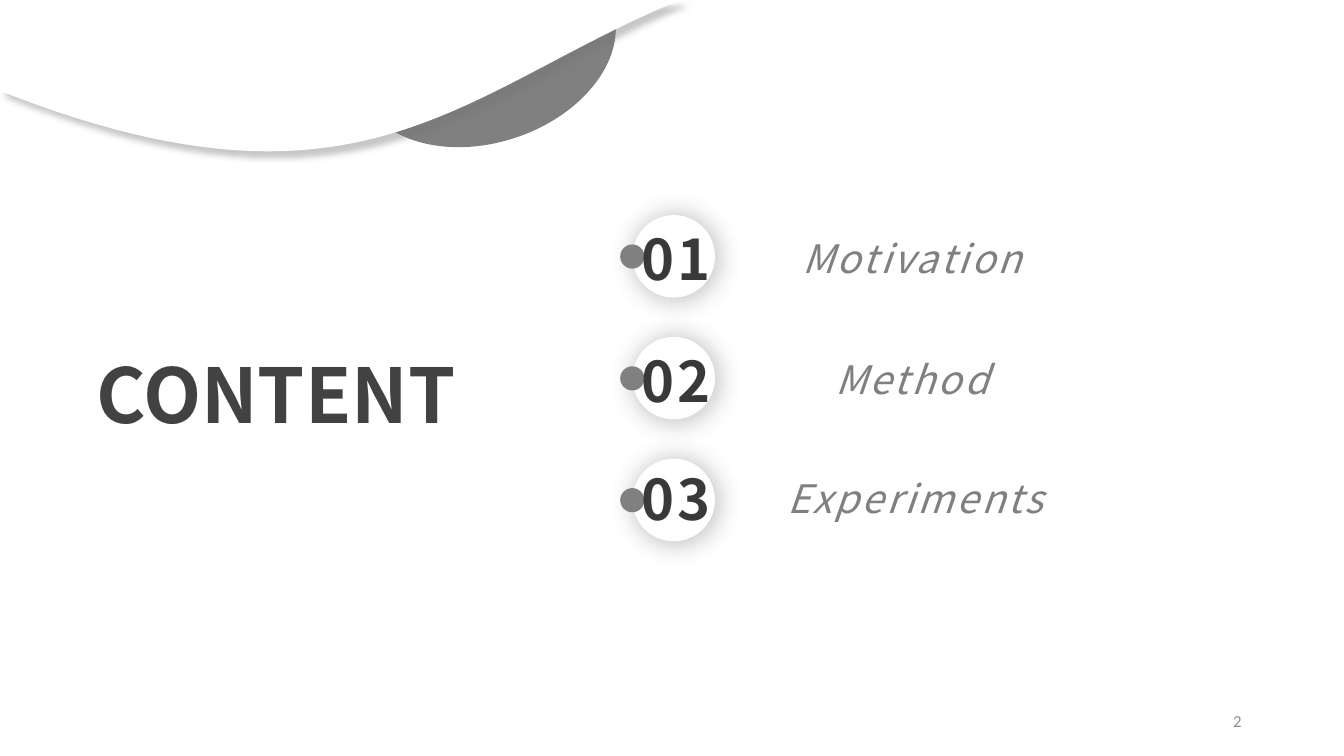
from lxml import etree
from pptx import Presentation
from pptx import util as u
from pptx.dml.color import RGBColor
from pptx.enum import shapes, text
from pptx.oxml.ns import qn

COLORS = {
    "white": "FFFFFF",
    "gray": "808080",
    "title": "424242",
    "number": "3B3838",
    "page": "8C8C8C",
    "wave_shadow": "767171",
}
FONT = "Noto Sans CJK SC"
ROW_STEP = 3.07
ITEMS = [
    ("01", "Motivation", 0.23, 0.47, 12.57),
    ("02", "Method", 0.23, 0.45, 12.57),
    ("03", "Experiments", 0.15, 0.39, 12.75),
]
BLOB = [
    (1.5, 0),
    (6.7, 1.72),
    (6.7, 1.93),
    (6.7, 3.21, 5.2, 4.26, 3.35, 4.26),
    (1.5, 4.26, 0, 3.21, 0, 1.93),
    (0, 1.12, 0.58, 0.41, 1.47, 0.01),
]
WAVE = [
    (0, 0),
    (17.17, 0),
    (16.79, 0.15),
    (11.53, 2.41, 8.94, 5.82, 0, 2.29),
]


def rgb(name):
    return RGBColor.from_string(COLORS[name])


def paint(sp, color):
    sp.shadow.inherit = False
    sp.fill.solid()
    sp.fill.fore_color.rgb = rgb(color)
    sp.line.fill.background()


def add_shadow(sp, color, blur, dist, angle, scale=100):
    effects = sp._element.spPr.find(qn("a:effectLst"))
    outer = etree.SubElement(
        effects, qn("a:outerShdw"), blurRad=str(u.Pt(blur)),
        dist=str(u.Pt(dist)), dir=str(angle * 60000),
        sx=str(scale * 1000), sy=str(scale * 1000), algn="ctr",
        rotWithShape="0")
    tint = etree.SubElement(outer, qn("a:srgbClr"), val=COLORS[color])
    etree.SubElement(tint, qn("a:alpha"), val="40000")


def add_text(s, words, x, y, w, h, size, color, font=FONT, bold=False,
             italic=False, align="LEFT", anchor="MIDDLE", spacing=0,
             wrap=True, grow=True, inset=True):
    tf = s.shapes.add_textbox(u.Cm(x), u.Cm(y), u.Cm(w), u.Cm(h)).text_frame
    tf.word_wrap = wrap
    tf.vertical_anchor = text.MSO_ANCHOR[anchor]
    if grow:
        tf.auto_size = text.MSO_AUTO_SIZE.SHAPE_TO_FIT_TEXT
    if not inset:
        tf.margin_left = tf.margin_right = 0
        tf.margin_top = tf.margin_bottom = 0
    p = tf.paragraphs[0]
    p.alignment = text.PP_ALIGN[align]
    r = p.add_run()
    r.text = words
    r.font.name = font
    r.font.size = u.Pt(size)
    r.font.bold = bold
    r.font.italic = italic
    r.font.color.rgb = rgb(color)
    if spacing:
        r.font._element.set("spc", str(spacing * 100))


def add_circle(s, x, y, size, color):
    sp = s.shapes.add_shape(shapes.MSO_SHAPE.OVAL, u.Cm(x), u.Cm(y),
                            u.Cm(size), u.Cm(size))
    paint(sp, color)
    return sp


def add_outline(s, x, y, height, segments, color):
    points = [(u.Cm(x + seg[i]), u.Cm(y + seg[i + 1]))
              for seg in segments for i in range(0, len(seg), 2)]
    builder = s.shapes.build_freeform(*points[0])
    builder.add_line_segments(points[1:], close=True)
    sp = builder.convert_to_shape()
    outline = next(sp._element.iter(qn("a:path")))
    lines = iter(outline.findall(qn("a:lnTo")))
    for segment in segments[1:]:
        first = next(lines)
        if len(segment) == 6:
            first.tag = qn("a:cubicBezTo")
            for _ in range(2):
                extra = next(lines)
                first.append(extra[0])
                outline.remove(extra)
    sp.height = u.Cm(height)
    outline.set("h", str(sp.height))
    paint(sp, color)
    return sp


def add_header(s, x, y):
    blob = add_outline(s, x + 8.97, y - 0.68, 4.26, BLOB, "gray")
    blob.rotation = 341.6
    wave = add_outline(s, x, y, 3.81, WAVE, "white")
    add_shadow(wave, "wave_shadow", 4, 6, 45)


def add_title(s, x, y, w, h):
    add_text(s, "CONTENT", x, y, w, h, 54, "title", bold=True,
             anchor="TOP", wrap=False)


def add_item(s, x, y, number, label, number_dy, label_dy, label_w):
    badge = s.shapes.add_group_shape()
    disc = add_circle(badge, x + 0.36, y, 2.08, "white")
    add_shadow(disc, "gray", 16, 2, 30, scale=110)
    add_circle(badge, x + 0.05, y + 0.74, 0.61, "gray")
    add_text(badge, number, x, y + number_dy, 2.92, 1.7, 40, "number",
             bold=True, align="CENTER", spacing=2, inset=False)
    add_text(s, label, x + 1.12, y + label_dy, label_w, 1.19, 28, "gray",
             italic=True, align="CENTER", spacing=2, inset=False)


def add_agenda(s, x, y):
    for i, item in enumerate(ITEMS):
        add_item(s, x, y + i * ROW_STEP, *item)


def add_page_number(s, x, y, w, h):
    add_text(s, "2", x, y, w, h, 12, "page", font="Calibri",
             align="RIGHT", grow=False)


def main():
    prs = Presentation()
    prs.slide_width, prs.slide_height = u.Cm(33.87), u.Cm(19.05)
    s = prs.slides.add_slide(prs.slide_layouts[6])
    s.background.fill.solid()
    s.background.fill.fore_color.rgb = rgb("white")
    add_header(s, 0, 0)
    add_page_number(s, 23.92, 17.65, 7.62, 1.02)
    add_title(s, 2.18, 8.64, 10.13, 2.57)
    add_agenda(s, 15.58, 5.42)
    prs.save("out.pptx")


if __name__ == "__main__":
    main()
